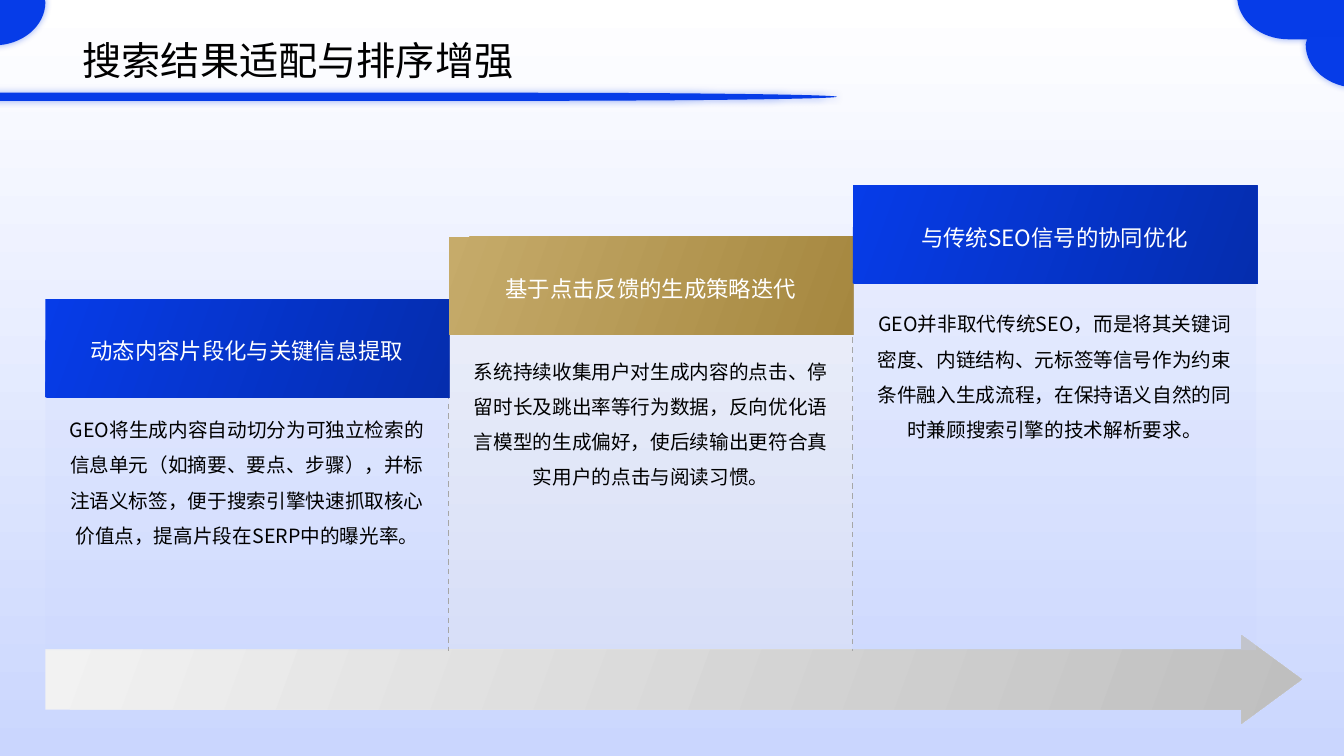
from lxml import etree
from pptx import Presentation
from pptx.dml.color import RGBColor
from pptx.enum.dml import MSO_LINE
from pptx.enum.shapes import MSO_CONNECTOR, MSO_SHAPE
from pptx.enum.text import MSO_ANCHOR, MSO_AUTO_SIZE, PP_ALIGN
from pptx.oxml.ns import qn
from pptx.util import Inches, Pt

RECT, ARROW = MSO_SHAPE.RECTANGLE, MSO_SHAPE.RIGHT_ARROW
STRAIGHT, DASH = MSO_CONNECTOR.STRAIGHT, MSO_LINE.DASH
TOP, MIDDLE = MSO_ANCHOR.TOP, MSO_ANCHOR.MIDDLE
LEFT, CENTER = PP_ALIGN.LEFT, PP_ALIGN.CENTER
NO_FIT = MSO_AUTO_SIZE.NONE

BLUE, DEEP_BLUE, PALE_BLUE = "063CE8", "052DAE", "CAD6FE"
GOLD, DEEP_GOLD, CREAM = "C6AB6A", "A5873F", "F4EEE1"


def rgb(code):
    return RGBColor.from_string(code)


def write(box, text, size, color="000000", align=LEFT, anchor=TOP, spacing=1.0,
          font="Noto Sans CJK SC"):
    frame = box.text_frame
    frame.word_wrap = True
    frame.auto_size = NO_FIT
    frame.vertical_anchor = anchor
    frame.margin_left = frame.margin_right = frame.margin_top = frame.margin_bottom = 0
    para = frame.paragraphs[0]
    para.alignment, para.line_spacing = align, spacing
    para.space_before = Pt(0)
    span = para.add_run()
    span.text = text
    span.font.size, span.font.name, span.font.bold = Pt(size), font, False
    span.font.color.rgb = rgb(color)
    etree.SubElement(span.font._element, qn("a:ea"), typeface=font)


class Page:
    def __init__(self, deck):
        self.page = deck.slides.add_slide(deck.slide_layouts[5])
        self.shapes = self.page.shapes

    def block(self, left, top, width, height, colors, angle=0, alpha=None, kind=RECT):
        box = self.shapes.add_shape(kind, Inches(left), Inches(top),
                                    Inches(width), Inches(height))
        box.shadow.inherit = False
        box.line.fill.background()
        if len(colors) == 2:
            box.fill.gradient()
            box.fill.gradient_angle = 360 - angle
            for stop, color in zip(box.fill.gradient_stops, colors):
                stop.color.rgb = rgb(color)
        else:
            box.fill.solid()
            box.fill.fore_color.rgb = rgb(colors[0])
        if alpha is not None:
            color_node = box._element.spPr.find(".//" + qn("a:srgbClr"))
            etree.SubElement(color_node, qn("a:alpha"), val=str(alpha * 1000))
        return box

    def text(self, left, top, width, height, text, **style):
        box = self.shapes.add_textbox(Inches(left), Inches(top),
                                      Inches(width), Inches(height))
        write(box, text, **style)

    def divider(self, x, top, bottom):
        line = self.shapes.add_connector(STRAIGHT, Inches(x), Inches(top),
                                         Inches(x), Inches(bottom))
        line.line.color.rgb = rgb("A6A6A6")
        line.line.width, line.line.dash_style = Pt(1), DASH
        etree.SubElement(line._element.spPr, qn("a:effectLst"))

    def glowing_outline(self, points, curves):
        """Closed outline; each entry of curves is the index of a curve's first handle."""
        points = [(Inches(x), Inches(y)) for x, y in points]
        builder = self.shapes.build_freeform(*points[0], scale=1.0)
        builder.add_line_segments(points[1:], close=True)
        box = builder.convert_to_shape()
        segments = list(box._element.iter(qn("a:lnTo")))
        for first in curves:
            handles = segments[first - 1:first + 2]
            bend = etree.Element(qn("a:cubicBezTo"))
            handles[0].addprevious(bend)
            for segment in handles:
                bend.append(segment[0])
                segment.getparent().remove(segment)
        box.fill.solid()
        box.fill.fore_color.rgb = rgb(BLUE)
        box.line.fill.background()
        box.shadow.inherit = False
        effects = box._element.spPr.find(qn("a:effectLst"))
        glow = etree.SubElement(effects, qn("a:outerShdw"), blurRad=str(Pt(5)),
                                dist="0", dir="0", algn="ctr", rotWithShape="0")
        color = etree.SubElement(glow, qn("a:srgbClr"), val=BLUE)
        etree.SubElement(color, qn("a:alpha"), val="40000")

    def corner(self, x, y, direction=1):
        outline = [(0.02, 0), (1.08, 0), (1.08, 0.51), (0.51, 0.51),
                   (0.23, 0.51), (0, 0.32), (0, 0.08)]
        self.glowing_outline([(x + direction * dx, y + dy) for dx, dy in outline],
                             curves=[4])

    def title(self, left, top, width, height, text, **style):
        box = self.shapes.title
        box.left, box.top = Inches(left), Inches(top)
        box.width, box.height = Inches(width), Inches(height)
        write(box, text, **style)
        self.shapes._spTree.append(box._element)  # in front of the backdrop


# header top, body top, text top, divider top, header colours, body colour, heading, text
STEPS = [
    (2.97, 3.85, 4.03, 3.04, (BLUE, DEEP_BLUE), PALE_BLUE,
     "动态内容片段化与关键信息提取",
     "GEO将生成内容自动切分为可独立检索的信息单元（如摘要、要点、步骤），并标注语义标签，"
     "便于搜索引擎快速抓取核心价值点，提高片段在SERP中的曝光率。"),
    (2.35, 3.31, 3.45, 2.48, (GOLD, DEEP_GOLD), CREAM,
     "基于点击反馈的生成策略迭代",
     "系统持续收集用户对生成内容的点击、停留时长及跳出率等行为数据，反向优化语言模型的"
     "生成偏好，使后续输出更符合真实用户的点击与阅读习惯。"),
    (1.84, 2.77, 2.98, None, (BLUE, DEEP_BLUE), PALE_BLUE,
     "与传统SEO信号的协同优化",
     "GEO并非取代传统SEO，而是将其关键词密度、内链结构、元标签等信号作为约束条件融入"
     "生成流程，在保持语义自然的同时兼顾搜索引擎的技术解析要求。"),
]
FIRST_LEFT, LAST_LEFT = 0.45, 8.46
PITCH = (LAST_LEFT - FIRST_LEFT) / (len(STEPS) - 1)


def main():
    deck = Presentation()
    deck.slide_width, deck.slide_height = Inches(13.33), Inches(7.5)
    page = Page(deck)

    # Backdrop and base arrow
    page.block(0, 0, 13.33, 7.5, ("FFFFFF", PALE_BLUE), angle=90)
    arrow = page.block(0.45, 6.3, 12.46, 0.88, ("F2F2F2", "BFBFBF"), angle=20, kind=ARROW)
    arrow.adjustments[0] = arrow.adjustments[1] = 0.68

    # Rising steps
    for index, step in enumerate(STEPS):
        head_top, body_top, text_top, line_top, head_colors, body_color, heading, text = step
        left = FIRST_LEFT + index * PITCH
        page.block(left, body_top, 4, 6.45 - body_top, (body_color,), alpha=18)
        if line_top:
            page.divider(left + 4, line_top, 6.46)
        page.block(left, head_top, 4.01, 0.97, head_colors, angle=20)
        page.text(left + 0.17, text_top, 3.66, 6.19 - text_top, text,
                  size=14, align=CENTER, spacing=1.5)
        page.text(left + 0.17, head_top + 0.11, 3.66, 0.75, heading, size=16,
                  color="FFFFFF", align=CENTER, anchor=MIDDLE, spacing=1.2)

    # Title with its tapering underline
    page.glowing_outline([(-0.09, 0.92), (5.18, 0.92), (6.9, 0.92), (8.3, 0.94),
                          (8.3, 0.96), (8.3, 0.98), (6.9, 1), (5.18, 1), (-0.09, 1)],
                         curves=[2, 5])
    page.corner(12.27, -0.12)
    page.title(0.82, 0.23, 8.42, 0.59, "搜索结果适配与排序增强",
               size=28, anchor=MIDDLE, spacing=1.3)

    # Remaining corner ornaments
    page.corner(0.45, -0.06, direction=-1)
    page.corner(12.95, 0.36)

    deck.save("out.pptx")


if __name__ == "__main__":
    main()
